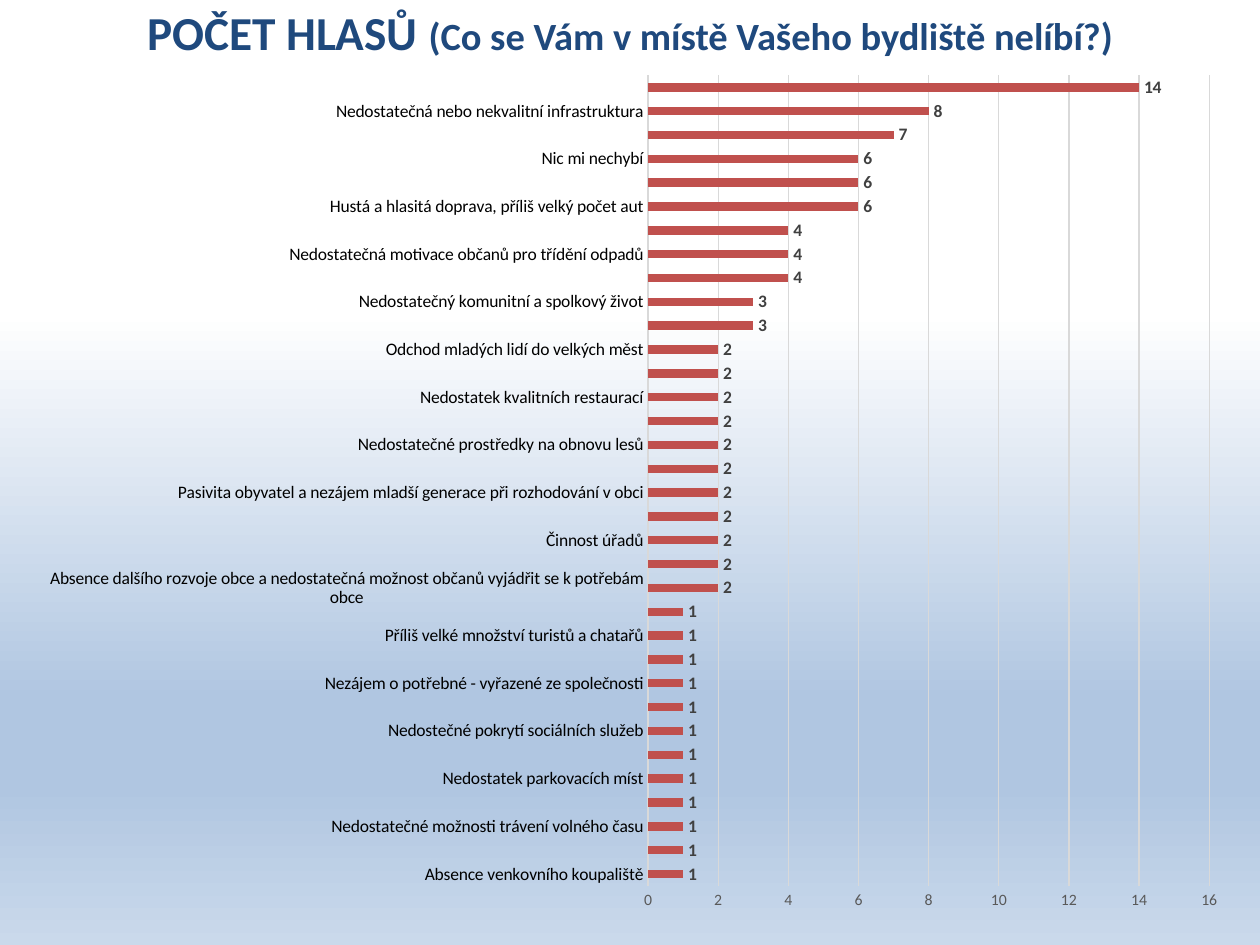
from pptx import Presentation
from pptx.chart.data import CategoryChartData
from pptx.dml.color import RGBColor
from pptx.enum.chart import XL_CHART_TYPE, XL_LABEL_POSITION, XL_TICK_MARK
from pptx.enum.text import MSO_ANCHOR, MSO_AUTO_SIZE, PP_ALIGN
from pptx.oxml import parse_xml
from pptx.oxml.ns import nsdecls, qn
from pptx.util import Pt

NAVY = RGBColor(0x1F, 0x49, 0x7D)
RED = RGBColor(0xC0, 0x50, 0x4D)
BLACK = RGBColor(0, 0, 0)
DARK = RGBColor(0x40, 0x40, 0x40)
GREY = RGBColor(0x59, 0x59, 0x59)
PALE = RGBColor(0xD9, 0xD9, 0xD9)
WHITE = RGBColor(0xFF, 0xFF, 0xFF)
BLUE = RGBColor(0xB0, 0xC6, 0xE1)
LIGHT = RGBColor(0xCA, 0xD9, 0xEB)
FACE = "Calibri"

STOPS = [(33, WHITE), (74, BLUE), (83, BLUE), (100, LIGHT)]
VOTES = [
    ("Absence venkovního koupaliště", 1),
    ("Činnost neziskových organizací", 1),
    ("Nedostatečné možnosti trávení volného času", 1),
    ("Nedostatečné zázemí pro obyvatele v obci", 1),
    ("Nedostatek parkovacích míst", 1),
    ("Nedostatek volnočasových aktivit pro handicapované děti", 1),
    ("Nedostečné pokrytí sociálních služeb", 1),
    ("Nevhodně vypadající nové stavby", 1),
    ("Nezájem o potřebné - vyřazené ze společnosti", 1),
    ("Omezení místních částí při rozhodování o rozvoji", 1),
    ("Příliš velké množství turistů a chatařů", 1),
    ("Negativní společenské jevy", 1),
    ("Absence dalšího rozvoje obce a nedostatečná možnost občanů vyjádřit se k potřebám obce", 2),
    ("Bezohledné a nezodpovědné chování k obecnímu majetku", 2),
    ("Činnost úřadů", 2),
    ("Chybějící ČOV", 2),
    ("Pasivita obyvatel a nezájem mladší generace při rozhodování v obci", 2),
    ("Narušení kvality životního prostředí okolními vlivy", 2),
    ("Nedostatečné prostředky na obnovu lesů", 2),
    ("Nedostatečné vzdělání a podoba distanční výuky", 2),
    ("Nedostatek kvalitních restaurací", 2),
    ("Špatné sousedské vztahy v obci ", 2),
    ("Odchod mladých lidí do velkých měst", 2),
    ("Nedostatečné sportovní zázemí pro děti a dospělé ", 3),
    ("Nedostatečný komunitní a spolkový život", 3),
    ("Nedostatečná konkurence obchodů", 4),
    ("Nedostatečná motivace občanů pro třídění odpadů", 4),
    ("Rušení a nedostupnost některých služeb", 4),
    ("Hustá a hlasitá doprava, příliš velký počet aut", 6),
    ("Nedostatek pracovních příležitostí", 6),
    ("Nic mi nechybí", 6),
    ("Nedostupné bydlení", 7),
    ("Nedostatečná nebo nekvalitní infrastruktura", 8),
    ("Nedostatečná dopravní obslužnost", 14),
]


def style(font, size, color, bold=False):
    font.name = FACE
    font.size = Pt(size)
    font.bold = bold
    font.color.rgb = color


deck = Presentation()
deck.slide_width, deck.slide_height = Pt(720), Pt(540)
slide = deck.slides.add_slide(deck.slide_layouts[5])

fill = slide.background.fill
fill.gradient()
fill.gradient_angle = 270
stops = slide.element.find(".//" + qn("a:gsLst"))
for stop in list(stops):
    stops.remove(stop)
for pos, color in STOPS:
    stops.append(parse_xml(
        f'<a:gs {nsdecls("a")} pos="{pos * 1000}"><a:srgbClr val="{color}"/></a:gs>'))

title = slide.shapes.title
title.left, title.top, title.width, title.height = Pt(36), Pt(-8), Pt(648), Pt(52.5)
frame = title.text_frame
frame.auto_size = MSO_AUTO_SIZE.NONE
frame.word_wrap = True
frame.vertical_anchor = MSO_ANCHOR.MIDDLE
para = frame.paragraphs[0]
para.alignment = PP_ALIGN.CENTER
style(para.font, 27, NAVY, True)
for text, size in [("POČET HLASŮ ", 27), ("(Co se Vám v místě Vašeho bydliště nelíbí?)", 22)]:
    run = para.add_run()
    run.text = text
    run.font.size = Pt(size)

data = CategoryChartData()
data.categories = [name for name, count in VOTES]
data.add_series("Počet hlasů", [count for name, count in VOTES])
chart = slide.shapes.add_chart(
    XL_CHART_TYPE.BAR_CLUSTERED, Pt(13), Pt(3.6), Pt(694), Pt(527), data).chart
chart.has_title = False
chart.has_legend = False
style(chart.font, 10, BLACK)

plot = chart.plots[0]
plot.gap_width = 182
plot.vary_by_categories = False
bars = plot.series[0].format.fill
bars.solid()
bars.fore_color.rgb = RED
plot.has_data_labels = True
labels = plot.data_labels
labels.show_value = True
labels.position = XL_LABEL_POSITION.OUTSIDE_END
style(labels.font, 10, DARK, True)

cats = chart.category_axis
cats.has_major_gridlines = False
style(cats.tick_labels.font, 10, BLACK)
vals = chart.value_axis
vals.minimum_scale, vals.maximum_scale, vals.major_unit = 0, 16, 2
vals.has_major_gridlines = True
style(vals.tick_labels.font, 9, GREY)
vals.format.line.fill.background()
for axis in (cats, vals):
    axis.major_tick_mark = axis.minor_tick_mark = XL_TICK_MARK.NONE
for line in (cats.format.line, vals.major_gridlines.format.line):
    line.color.rgb = PALE
    line.width = Pt(0.75)

area = chart.element.find(".//" + qn("c:plotArea"))
for old in area.findall(qn("c:layout")):
    area.remove(old)
sides = "".join(f'<c:{key} val="{val}"/>' for key, val in [
    ("layoutTarget", "inner"), ("xMode", "edge"), ("yMode", "edge"),
    ("x", 0.515), ("y", 0.075), ("w", 0.462), ("h", 0.879)])
area.insert(0, parse_xml(
    f'<c:layout {nsdecls("c")}><c:manualLayout>{sides}</c:manualLayout></c:layout>'))

deck.save("out.pptx")
